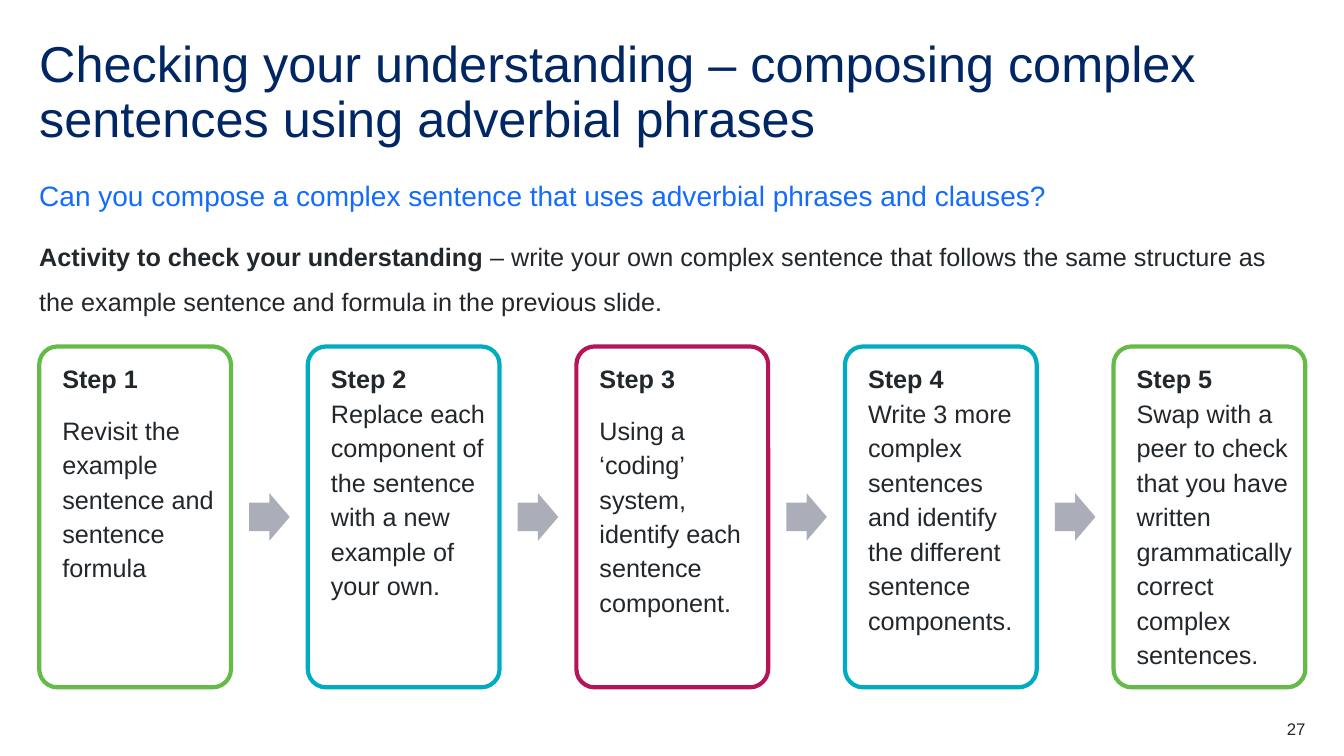
from dataclasses import dataclass

from pptx import Presentation
from pptx import util as u
from pptx.dml.color import RGBColor
from pptx.enum import shapes, text


@dataclass(frozen=True)
class Theme:
    font: str = "Arial"
    navy: str = "002664"
    blue: str = "146CFD"
    ink: str = "22272B"
    green: str = "64BB47"
    teal: str = "00ACC2"
    crimson: str = "B51458"
    grey: str = "ABADB8"
    title_size: int = 36
    question_size: int = 20
    body_size: int = 18
    number_size: int = 12


class SlideBuilder:
    def __init__(self, page, theme):
        self.page = page
        self.theme = theme

    def place(self, shape, left, top, width, height):
        shape.left, shape.top = u.Pt(left), u.Pt(top)
        shape.width, shape.height = u.Pt(width), u.Pt(height)

    def frame(self, shape, margins=(0, 0, 0, 0)):
        frame = shape.text_frame
        frame.word_wrap = True
        frame.auto_size = text.MSO_AUTO_SIZE.NONE
        frame.vertical_anchor = text.MSO_ANCHOR.TOP
        (frame.margin_left, frame.margin_top,
         frame.margin_right, frame.margin_bottom) = map(u.Pt, margins)
        return frame

    def style(self, para, size, color, spacing=1.0, after=0, bold=False,
              align=text.PP_ALIGN.LEFT):
        para.alignment = align
        para.line_spacing = spacing
        para.space_before, para.space_after = u.Pt(0), u.Pt(after)
        font = para.font
        font.name, font.size, font.bold = self.theme.font, u.Pt(size), bold
        font.color.rgb = RGBColor.from_string(color)

    def placeholder(self, index, bounds, spans, size, color, spacing, after=0):
        box = self.page.placeholders[index]
        self.place(box, *bounds)
        para = self.frame(box).paragraphs[0]
        self.style(para, size, color, spacing, after)
        for wording, bold in spans:
            span = para.add_run()
            span.text = wording
            if bold:
                span.font.bold = True

    def card(self, bounds, color, heading, detail, same_paragraph):
        box = self.page.shapes.add_shape(
            shapes.MSO_SHAPE.ROUNDED_RECTANGLE, *map(u.Pt, bounds))
        box.adjustments[0] = 0.095
        box.shadow.inherit = False
        box.fill.background()
        box.line.color.rgb = RGBColor.from_string(color)
        box.line.width = u.Pt(3)
        frame = self.frame(box, (12.7, 5.5, 5.5, 5.5))
        size, ink = self.theme.body_size, self.theme.ink
        para = frame.paragraphs[0]
        self.style(para, size, ink, 1.14, 12, bold=not same_paragraph)
        span = para.add_run()
        span.text = heading
        if same_paragraph:
            span.font.bold = True
            para.add_line_break()
        else:
            para = frame.add_paragraph()
            self.style(para, size, ink, 1.14, 6)
        para.add_run().text = detail

    def arrow(self, bounds):
        arrow = self.page.shapes.add_shape(
            shapes.MSO_SHAPE.RIGHT_ARROW, *map(u.Pt, bounds))
        arrow.adjustments[0], arrow.adjustments[1] = 0.6, 0.5
        arrow.shadow.inherit = False
        arrow.fill.solid()
        arrow.fill.fore_color.rgb = RGBColor.from_string(self.theme.grey)
        arrow.line.fill.background()

    def page_number(self, bounds, number):
        box = self.page.shapes.add_textbox(*map(u.Pt, bounds))
        para = self.frame(box).paragraphs[0]
        self.style(para, self.theme.number_size, self.theme.ink,
                   align=text.PP_ALIGN.RIGHT)
        para.add_run().text = number

    def remove_empty_placeholders(self):
        for box in list(self.page.placeholders):
            if not box.text_frame.text:
                box.element.getparent().remove(box.element)


def main():
    theme = Theme()
    deck = Presentation()
    deck.slide_width, deck.slide_height = u.Pt(960), u.Pt(540)
    comparison_layout = deck.slide_layouts[4]
    builder = SlideBuilder(deck.slides.add_slide(comparison_layout), theme)

    left, width = 28, 904.4
    builder.placeholder(
        0, (left, 28, width, 74.4),
        [("Checking your understanding – composing complex sentences "
          "using adverbial phrases", False)],
        theme.title_size, theme.navy, 0.9)
    builder.placeholder(
        1, (left, 115.2, width, 24.5),
        [("Can you compose a complex sentence that uses adverbial phrases "
          "and clauses?", False)],
        theme.question_size, theme.blue, 1.5, 12)
    builder.placeholder(
        3, (left, 161.3, width, 64),
        [("Activity to check your understanding ", True),
         ("– write your own complex sentence that follows the same structure "
          "as the example sentence and formula in the previous slide.", False)],
        theme.body_size, theme.ink, 1.5, 12)
    builder.remove_empty_placeholders()

    steps = [
        (theme.green, "Step 1",
         "Revisit the example sentence and sentence formula", False),
        (theme.teal, "Step 2 ",
         "Replace each component of the sentence with a new example of "
         "your own.", True),
        (theme.crimson, "Step 3",
         "Using a ‘coding’ system, identify each sentence component.", False),
        (theme.teal, "Step 4",
         "Write 3 more complex sentences and identify the different sentence "
         "components.", True),
        (theme.green, "Step 5",
         "Swap with a peer to check that you have written grammatically "
         "correct complex sentences.", True),
    ]
    card_top, card_width, card_height = 247.5, 137, 243.5
    arrow_width, arrow_height = 29, 34
    pitch = (width - card_width) / (len(steps) - 1)
    arrow_offset = (card_width + pitch - arrow_width) / 2
    arrow_top = card_top + (card_height - arrow_height) / 2
    for index, step in enumerate(steps):
        card_left = left + index * pitch
        builder.card((card_left, card_top, card_width, card_height), *step)
        if index < len(steps) - 1:
            builder.arrow((card_left + arrow_offset, arrow_top,
                           arrow_width, arrow_height))

    builder.page_number((876, 513.5, 56.5, 14.5), "27")
    deck.save("out.pptx")


if __name__ == "__main__":
    main()
